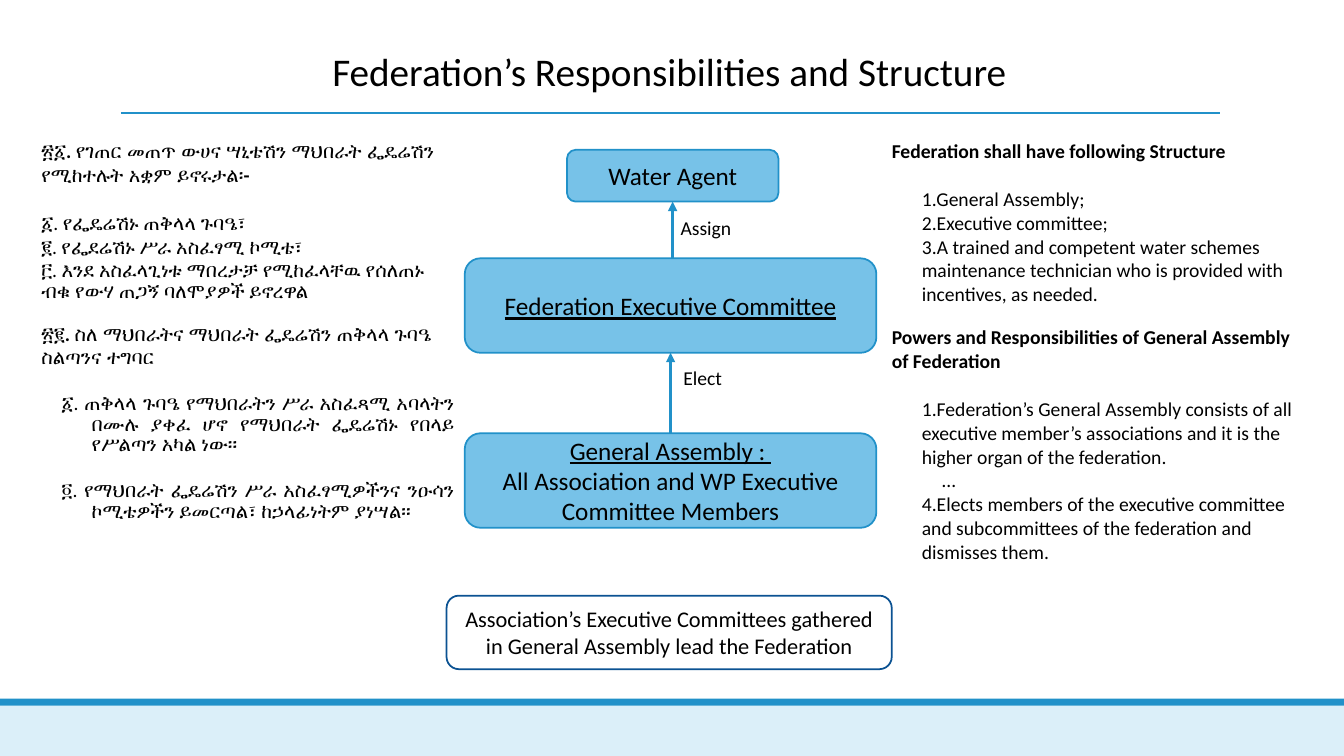
from pptx import Presentation
from pptx.dml.color import RGBColor
from pptx.enum.shapes import MSO_CONNECTOR as Connector, MSO_SHAPE as Shape
from pptx.enum.text import MSO_ANCHOR as Anchor, MSO_AUTO_SIZE as AutoSize, PP_ALIGN as Align
from pptx.oxml.ns import qn
from pptx.util import Pt
from lxml import etree

COLORS = {"text": "000000", "box": "77C2E8", "line": "2191C9", "band": "DBEFF9",
          "white": "FFFFFF", "navy": "0B5292"}
FONT = "Calibri"
GAP = 17

HEADING = {"bold": True}
TIGHT_HEADING = {"bold": True, "spacing": Pt(15)}
PLAIN = {}
FIRST_PLAIN = {"before": GAP}
ITEM = {"level": 1, "margin": 21.5}
FIRST_ITEM = {**ITEM, "before": GAP}
ELLIPSIS = {"level": 1, "margin": 36}
CLAUSE = {"level": 1, "margin": 36, "indent": -21.5, "align": Align.JUSTIFY, "before": GAP}

# (row, column): paragraphs with their styles
PROVISIONS = {
    (0, 0): [
        ("፳፩. የገጠር መጠጥ ውሀና ሣኒቴሽን ማህበራት ፌዴሬሽን የሚከተሉት አቋም ይኖሩታል፡-", HEADING),
        ("፩. የፌዴሬሽኑ ጠቅላላ ጉባዔ፣", FIRST_PLAIN),
        ("፪. የፌደሬሽኑ ሥራ አስፈፃሚ ኮሚቴ፣", PLAIN),
        ("፫. እንደ አስፈላጊነቱ ማበረታቻ የሚከፈላቸዉ የሰለጠኑ ብቁ የውሃ ጠጋኝ ባለሞያዎች ይኖረዋል", PLAIN),
    ],
    (0, 2): [
        ("Federation shall have following Structure", HEADING),
        ("1.General Assembly;", FIRST_ITEM),
        ("2.Executive committee;", ITEM),
        ("3.A trained and competent water schemes maintenance technician who is "
         "provided with incentives, as needed.", ITEM),
    ],
    (1, 0): [
        ("፳፪. ስለ ማህበራትና ማህበራት ፌዴሬሽን ጠቅላላ ጉባዔ ስልጣንና ተግባር", TIGHT_HEADING),
        ("፩. ጠቅላላ ጉባዔ የማህበራትን ሥራ አስፈጻሚ አባላትን በሙሉ ያቀፈ ሆኖ የማህበራት ፌዴሬሽኑ "
         "የበላይ የሥልጣን አካል ነው፡፡", CLAUSE),
        ("፬. የማህበራት ፌዴሬሽን ሥራ አስፈፃሚዎችንና ንዑሳን ኮሚቴዎችን ይመርጣል፣ ከኃላፊነትም ያነሣል፡፡", CLAUSE),
    ],
    (1, 2): [
        ("Powers and Responsibilities of General Assembly of Federation", HEADING),
        ("1.Federation’s General Assembly consists of all executive member’s "
         "associations and it is the higher organ of the federation.", FIRST_ITEM),
        ("…", ELLIPSIS),
        ("4.Elects members of the executive committee and subcommittees of the "
         "federation and dismisses them.", ITEM),
    ],
}


def color(name):
    return RGBColor.from_string(COLORS[name])


def format_runs(para, size, bold=False, underline=False):
    for span in para.runs:
        font = span.font
        font.name, font.size = FONT, Pt(size)
        font.bold, font.underline = bold, underline
        font.color.rgb = color("text")


def add_title(page, text):
    title = page.shapes.title
    title.left, title.top, title.width, title.height = Pt(22.3), Pt(22.3), Pt(911.5), Pt(49)
    frame = title.text_frame
    frame.text = text
    frame.vertical_anchor = Anchor.BOTTOM
    frame.auto_size = AutoSize.NONE
    para = frame.paragraphs[0]
    para.alignment, para.line_spacing = Align.CENTER, 0.85
    format_runs(para, 28)


def add_box(page, kind, place, fill, line=None, lines=(), size=18, underline_first=False):
    box = page.shapes.add_shape(kind, *map(Pt, place))
    box.shadow.inherit = False
    box.fill.solid()
    box.fill.fore_color.rgb = color(fill)
    if line:
        box.line.color.rgb = color(line)
        box.line.width = Pt(1.25)
    else:
        box.line.fill.background()
    if lines:
        frame = box.text_frame
        frame.text = "\n".join(lines)
        frame.word_wrap = True
        frame.vertical_anchor = Anchor.MIDDLE
        for index, para in enumerate(frame.paragraphs):
            para.alignment = Align.CENTER
            format_runs(para, size, underline=underline_first and index == 0)
    return box


def add_line(page, start, end, width):
    line = page.shapes.add_connector(Connector.STRAIGHT, *map(Pt, (*start, *end)))
    line.line.color.rgb = color("line")
    line.line.width = Pt(width)
    etree.SubElement(line._element.spPr, qn("a:effectLst"))
    return line


def add_arrow(page, start, end):
    arrow = add_line(page, start, end, 2.25)
    etree.SubElement(arrow.line._get_or_add_ln(), qn("a:tailEnd"), type="triangle")
    return arrow


def add_label(page, place, text):
    label = page.shapes.add_textbox(*map(Pt, place))
    frame = label.text_frame
    frame.text = text
    frame.word_wrap = True
    frame.auto_size = AutoSize.SHAPE_TO_FIT_TEXT
    format_runs(frame.paragraphs[0], 14)


def fill_cell(cell, entries):
    cell.margin_top = cell.margin_bottom = 0
    frame = cell.text_frame
    frame.text = "\n".join(text for text, _ in entries)
    for para, (_, style) in zip(frame.paragraphs, entries):
        para.level = style.get("level", 0)
        para.alignment = style.get("align", Align.LEFT)
        para.space_before = Pt(style.get("before", 0))
        para.line_spacing = style.get("spacing")
        properties = para._p.get_or_add_pPr()
        properties.set("marL", str(Pt(style.get("margin", 0))))
        properties.set("indent", str(Pt(style.get("indent", 0))))
        format_runs(para, 14, bold=style.get("bold", False))


def add_provisions(page):
    widths, heights = (309.5, 298, 304), (133, 171, 29)
    place = (22.3, 100, sum(widths), sum(heights))
    table = page.shapes.add_table(len(heights), len(widths), *map(Pt, place)).table
    table.first_row = table.horz_banding = False
    for column, width in zip(table.columns, widths):
        column.width = Pt(width)
    for row, height in zip(table.rows, heights):
        row.height = Pt(height)
    for cell in table.iter_cells():
        cell.fill.background()
    for position, entries in PROVISIONS.items():
        fill_cell(table.cell(*position), entries)


def main():
    deck = Presentation()
    deck.slide_width, deck.slide_height = Pt(960), Pt(540)
    page = deck.slides.add_slide(deck.slide_layouts[5])

    add_box(page, Shape.RECTANGLE, (0, 504, 960, 36), "band")
    add_box(page, Shape.RECTANGLE, (0, 499, 960, 5), "line")
    add_line(page, (86.4, 80.8), (871.2, 80.8), 1.5)
    add_title(page, "Federation’s Responsibilities and Structure")
    add_provisions(page)

    assembly = add_box(page, Shape.ROUNDED_RECTANGLE, (332, 309.5, 294, 67.5), "box", "line",
                       ["General Assembly : ",
                        "All Association and WP Executive Committee Members"],
                       underline_first=True)
    committee = add_box(page, Shape.ROUNDED_RECTANGLE, (332, 184.5, 294, 67.5), "box", "line",
                        ["Federation Executive Committee"], underline_first=True)
    agent = add_box(page, Shape.ROUNDED_RECTANGLE, (405, 107, 151, 37), "box", "line",
                    ["Water Agent"])

    elect = add_arrow(page, (479, 309.5), (479, 252))
    elect.begin_connect(assembly, 0)
    elect.end_connect(committee, 2)
    add_label(page, (481, 258, 56, 24.5), "Elect")
    assign = add_arrow(page, (480.5, 184.5), (480.5, 144))
    assign.end_connect(agent, 2)
    add_label(page, (479, 151, 70.5, 24.5), "Assign")

    add_box(page, Shape.ROUNDED_RECTANGLE, (319, 425.5, 318, 52.5), "white", "navy",
            ["Association’s Executive Committees gathered in General Assembly "
             "lead the Federation"], size=16)
    deck.save("out.pptx")


if __name__ == "__main__":
    main()
